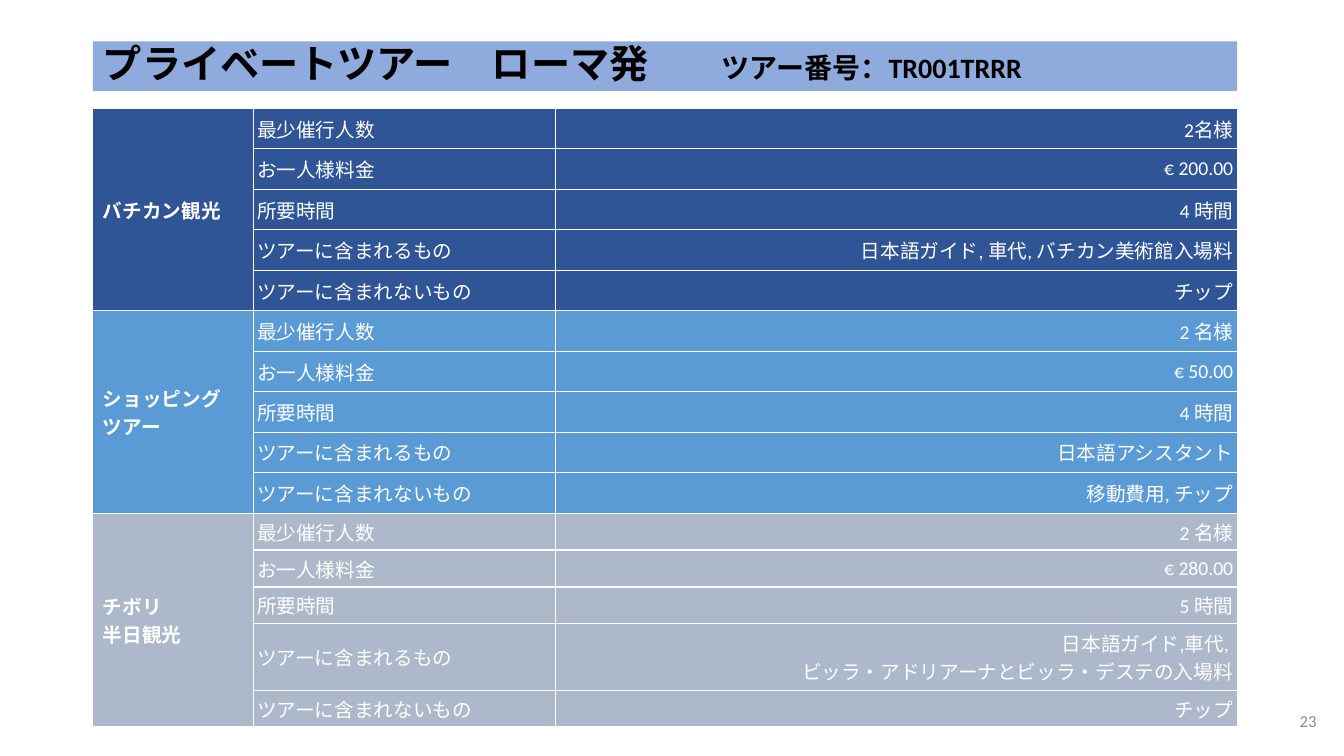
"""Build the slide listing private tours that leave from Rome."""
from lxml import etree
from pptx import Presentation
from pptx.dml.color import RGBColor
from pptx.enum.text import MSO_ANCHOR, MSO_AUTO_SIZE, PP_ALIGN
from pptx.oxml.ns import qn
from pptx.util import Cm, Pt

MIDDLE = MSO_ANCHOR.MIDDLE
NO_AUTOFIT = MSO_AUTO_SIZE.NONE
LEFT, RIGHT = PP_ALIGN.LEFT, PP_ALIGN.RIGHT

FONT = "Calibri"
BLACK = RGBColor(0x00, 0x00, 0x00)
WHITE = RGBColor(0xFF, 0xFF, 0xFF)
GREY = RGBColor(0x8C, 0x8C, 0x8C)
TITLE_BLUE = RGBColor(0x8F, 0xAA, 0xDC)
NAVY = RGBColor(0x2F, 0x55, 0x97)
SKY = RGBColor(0x5B, 0x9B, 0xD5)
SILVER = RGBColor(0xAD, 0xB9, 0xCA)

LABELS = ["最少催行人数", "お一人様料金", "所要時間",
          "ツアーに含まれるもの", "ツアーに含まれないもの"]
TOURS = [
    ("バチカン観光", NAVY, [1.02] * 5,
     ["2名様", "€ 200.00", "4 時間",
      "日本語ガイド, 車代, バチカン美術館入場料", "チップ"]),
    ("ショッピング\nツアー", SKY, [1.02] * 5,
     ["2 名様", "€ 50.00", "4 時間", "日本語アシスタント", "移動費用, チップ"]),
    ("チボリ\n半日観光", SILVER, [0.93, 0.93, 0.93, 1.67, 0.93],
     ["2 名様", "€ 280.00", "5 時間",
      "日本語ガイド,車代, \nビッラ・アドリアーナとビッラ・デステの入場料", "チップ"]),
]
COLUMN_WIDTHS = [4.04, 7.62, 17.18]
MARGIN_LEFT, CONTENT_WIDTH = Cm(2.34), Cm(28.84)


def style_paragraph(para, size, color, bold, align):
    para.alignment = align
    para.font.name = FONT
    para.font.size = Pt(size)
    para.font.bold = bold
    para.font.color.rgb = color


def style_cell(cell, text, fill, bold, align):
    cell.text = text
    cell.vertical_anchor = MIDDLE
    for para in cell.text_frame.paragraphs:
        style_paragraph(para, 14, WHITE, bold, align)
    properties = cell._tc.get_or_add_tcPr()
    for side in ("a:lnL", "a:lnR", "a:lnT", "a:lnB"):
        line = etree.SubElement(properties, qn(side), w=str(Pt(1)))
        solid = etree.SubElement(line, qn("a:solidFill"))
        etree.SubElement(solid, qn("a:srgbClr"), val=str(WHITE))
    cell.fill.solid()
    cell.fill.fore_color.rgb = fill


deck = Presentation()
deck.slide_width, deck.slide_height = Cm(33.87), Cm(19.05)
page = deck.slides.add_slide(deck.slide_layouts[5])

title = page.shapes.title
title.left, title.top = MARGIN_LEFT, Cm(1.04)
title.width, title.height = CONTENT_WIDTH, Cm(1.25)
title.fill.solid()
title.fill.fore_color.rgb = TITLE_BLUE
title.text_frame.auto_size = NO_AUTOFIT
title.text_frame.vertical_anchor = MIDDLE
heading = title.text_frame.paragraphs[0]
style_paragraph(heading, 28, BLACK, True, LEFT)
heading.line_spacing = 0.9
for text, size in [("プライベートツアー　ローマ発\t", 28), ("ツアー番号：TR001TRRR", 20)]:
    span = heading.add_run()
    span.text = text
    span.font.size = Pt(size)
heading_properties = heading._p.get_or_add_pPr()
tab_list = etree.Element(qn("a:tabLst"))
etree.SubElement(tab_list, qn("a:tab"), pos=str(Cm(15.6)), algn="l")
heading_properties.find(qn("a:defRPr")).addprevious(tab_list)

row_heights = [height for tour in TOURS for height in tour[2]]
table = page.shapes.add_table(
    len(row_heights), len(COLUMN_WIDTHS), MARGIN_LEFT, Cm(2.73),
    CONTENT_WIDTH, Cm(sum(row_heights))).table
table.first_row = False
table.horz_banding = False
for column, width in zip(table.columns, COLUMN_WIDTHS):
    column.width = Cm(width)
for row, height in zip(table.rows, row_heights):
    row.height = Cm(height)

for tour_index, (name, fill, heights, values) in enumerate(TOURS):
    first = tour_index * len(LABELS)
    name_cell = table.cell(first, 0)
    name_cell.merge(table.cell(first + len(LABELS) - 1, 0))
    style_cell(name_cell, name, fill, True, LEFT)
    for row_index, (label, value) in enumerate(zip(LABELS, values), first):
        for column_index, text, align in [(1, label, LEFT), (2, value, RIGHT)]:
            cell = table.cell(row_index, column_index)
            cell.margin_left = cell.margin_right = Cm(0.1)
            cell.margin_top = cell.margin_bottom = Cm(0.1)
            style_cell(cell, text, fill, False, align)

number_box = page.shapes.add_textbox(Cm(25.81), Cm(17.65), Cm(7.62), Cm(1.02))
number_box.text_frame.word_wrap = True
number_box.text_frame.vertical_anchor = MIDDLE
number_box.text_frame.text = "23"
style_paragraph(number_box.text_frame.paragraphs[0], 12, GREY, False, RIGHT)

deck.save("out.pptx")
